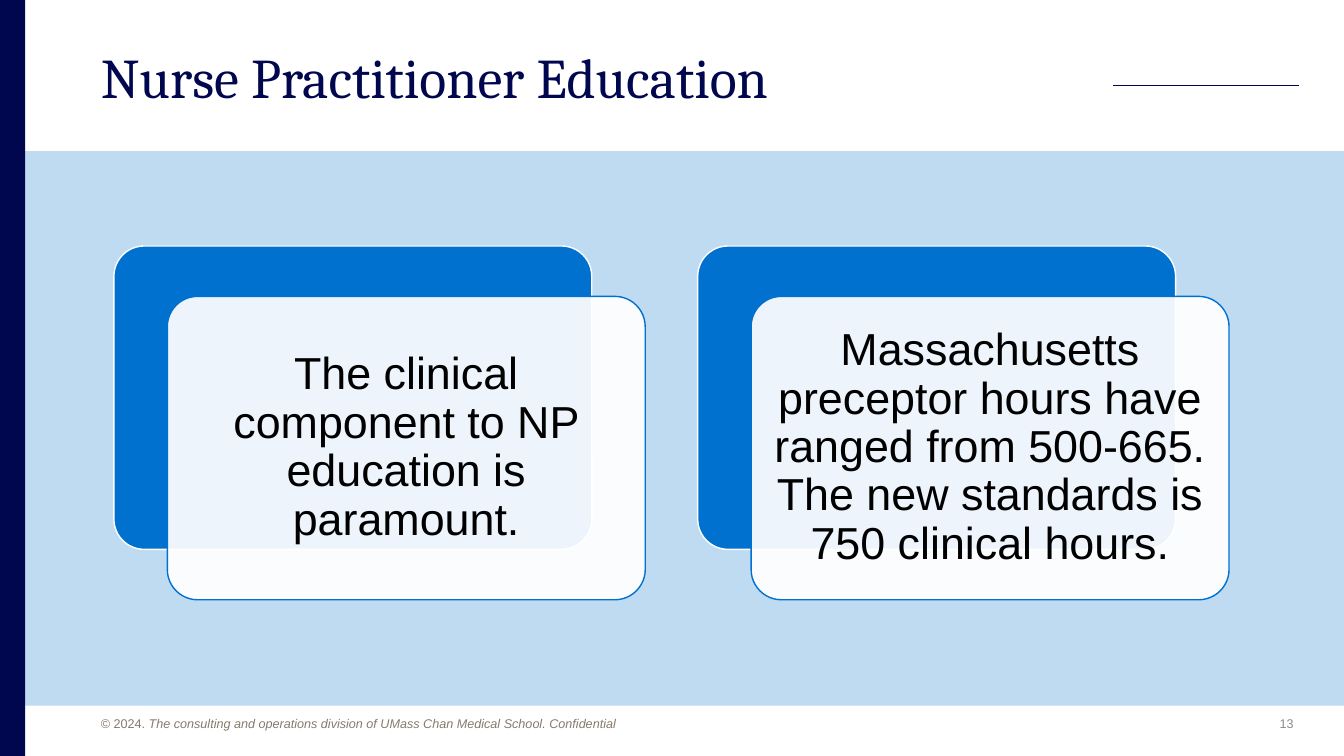
import pptx
import pptx.util
import pptx.dml.color
import pptx.enum.shapes
import pptx.enum.text
import lxml.etree

SHAPE = pptx.enum.shapes.MSO_SHAPE
ALIGN = pptx.enum.text.PP_ALIGN
ANCHOR = pptx.enum.text.MSO_ANCHOR
PX = 9144
COLORS = {
    "navy": "00074F",
    "blue": "0071CE",
    "white": "FFFFFF",
    "black": "000000",
    "taupe": "867A6E",
    "gray": "8C8C8C",
}
CARDS = [
    (113, "The clinical component to NP education is paramount."),
    (692, "Massachusetts preceptor hours have ranged from 500-665. "
          "The new standards is 750 clinical hours."),
]


class Deck:
    """Hold the style and the current slide, and draw elements on it."""

    def __init__(self, wide, high):
        self.prs = pptx.Presentation()
        self.prs.slide_width, self.prs.slide_height = self.emu(wide, high)
        self.slide = self.prs.slides.add_slide(self.prs.slide_layouts[6])

    def emu(self, *sizes):
        return [pptx.util.Emu(size * PX) for size in sizes]

    def rgb(self, name):
        return pptx.dml.color.RGBColor.from_string(COLORS[name])

    def block(self, box, fill, alpha=100, line=None, kind=SHAPE.RECTANGLE):
        shape = self.slide.shapes.add_shape(kind, *self.emu(*box))
        shape.shadow.inherit = False
        shape.fill.solid()
        shape.fill.fore_color.rgb = self.rgb(fill)
        if alpha < 100:
            tint = shape.fill._xPr.find(".//" + pptx.oxml.ns.qn("a:srgbClr"))
            node = lxml.etree.SubElement(tint, pptx.oxml.ns.qn("a:alpha"))
            node.set("val", str(alpha * 1000))
        if line:
            shape.line.color.rgb = self.rgb(line)
            shape.line.width = pptx.util.Pt(1)
        else:
            shape.line.fill.background()
        if kind == SHAPE.ROUNDED_RECTANGLE:
            shape.adjustments[0] = 0.1

    def rule(self, left, top, right, color):
        line = self.slide.shapes.add_connector(
            pptx.enum.shapes.MSO_CONNECTOR.STRAIGHT,
            *self.emu(left, top, right, top))
        line.line.color.rgb = self.rgb(color)
        line.line.width = pptx.util.Pt(0.5)
        lxml.etree.SubElement(
            line._element.spPr, pptx.oxml.ns.qn("a:effectLst"))

    def text(self, box, parts, size, color, font="Arial", align=ALIGN.LEFT,
             anchor=ANCHOR.TOP, inset=0, space=1.0):
        frame = self.slide.shapes.add_textbox(*self.emu(*box)).text_frame
        frame.word_wrap = True
        frame.vertical_anchor = anchor
        (frame.margin_left, frame.margin_top, frame.margin_right,
         frame.margin_bottom) = self.emu(*[inset] * 4)
        para = frame.paragraphs[0]
        para.alignment = align
        para.line_spacing = space
        for words, slant in parts:
            run = para.add_run()
            run.text = words
            run.font.name = font
            run.font.size = pptx.util.Pt(size)
            run.font.italic = slant
            run.font.color.rgb = self.rgb(color)

    def card(self, left, words):
        kind = SHAPE.ROUNDED_RECTANGLE
        self.block((left, 244, 474, 301), "blue", line="white", kind=kind)
        self.block((left + 53, 294, 474, 301), "white", 93, "blue", kind)
        self.text((left + 62, 303, 456, 283), [(words, False)], 32, "black",
                  align=ALIGN.CENTER, anchor=ANCHOR.MIDDLE, inset=13,
                  space=0.9)


def main():
    deck = Deck(1333, 750)
    deck.block((0, 150, 1333, 550), "blue", 25)
    deck.block((0, 0, 25, 750), "navy")
    deck.rule(1104, 85, 1288, "navy")
    deck.text((100, 700, 567, 25),
              [("© 2024. ", False),
               ("The consulting and operations division of UMass Chan "
                "Medical School. Confidential", True)],
              9, "taupe", anchor=ANCHOR.BOTTOM, space=1.5)
    deck.text((100, 50, 1000, 73), [("Nurse Practitioner Education", False)],
              40, "navy", "Cambria", space=0.9)
    deck.text((1233, 701, 50, 24), [("13", False)], 9, "gray",
              align=ALIGN.RIGHT, anchor=ANCHOR.BOTTOM)
    for left, words in CARDS:
        deck.card(left, words)
    deck.prs.save("out.pptx")


if __name__ == "__main__":
    main()
